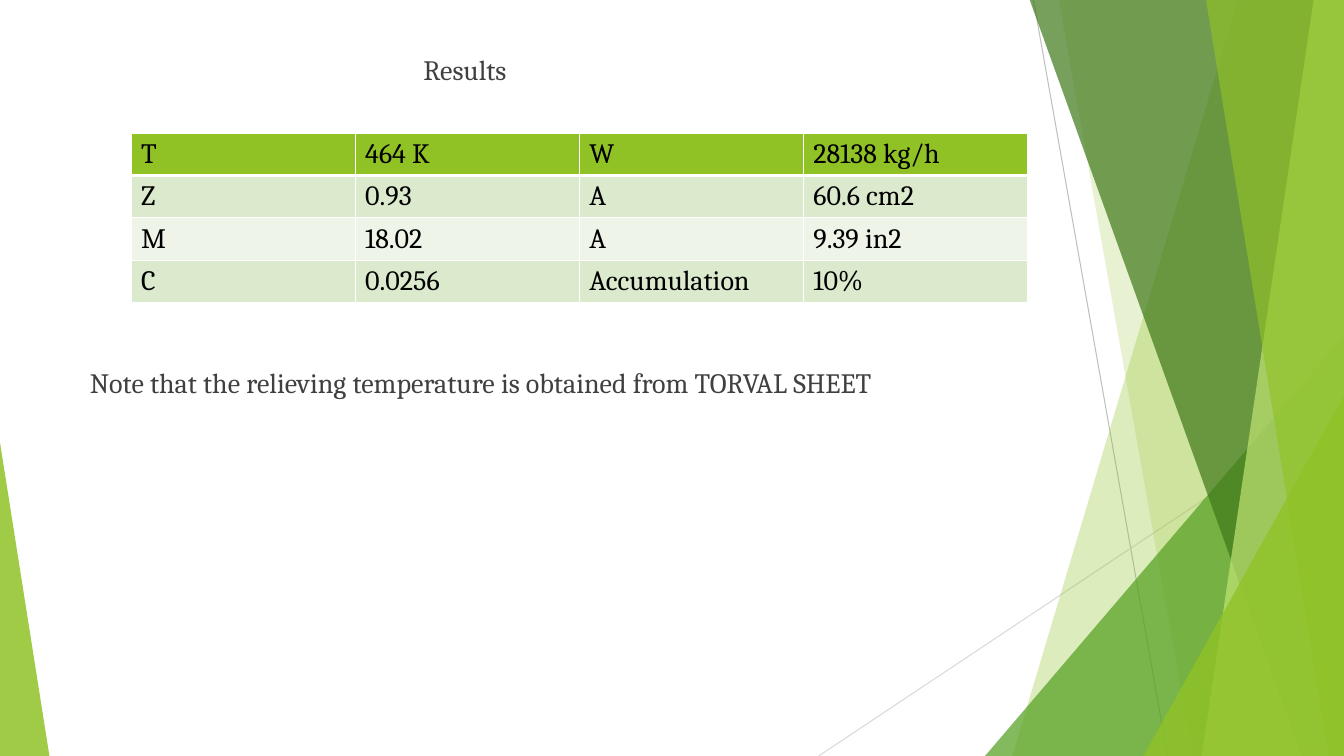
from dataclasses import dataclass

from lxml import etree
from pptx import Presentation
from pptx.dml.color import RGBColor
from pptx.enum.shapes import MSO_CONNECTOR, MSO_SHAPE
from pptx.enum.text import MSO_ANCHOR, MSO_AUTO_SIZE, PP_ALIGN
from pptx.oxml.ns import qn
from pptx.util import Inches, Pt

LINE = MSO_CONNECTOR.STRAIGHT
WEDGE = MSO_SHAPE.ISOSCELES_TRIANGLE
MIDDLE = MSO_ANCHOR.MIDDLE
NO_FIT = MSO_AUTO_SIZE.NONE
LEFT = PP_ALIGN.LEFT


@dataclass(frozen=True)
class Theme:
    font: str = "Cambria"
    size: int = 20
    text: str = "404040"
    cell: str = "000000"
    white: str = "FFFFFF"
    lime: str = "90C226"
    green: str = "54A021"
    dark: str = "3F7819"
    pale: str = "C0E474"
    bands: tuple = ("EEF4E8", "DBE9CD")
    rays: tuple = ("BFBFBF", "D9D9D9")


THEME = Theme()
WIDTH, HEIGHT = 13.33, 7.5
TOP = -0.01

# Start, end
RAYS = [((10.25, 0), (11.58, HEIGHT)), ((WIDTH, 4.03), (8.12, HEIGHT))]

# Left edge at the top and at the bottom, colour, opacity
BACK = [(12.28, 10.04, THEME.lime, 30), (10.5, 11.83, THEME.lime, 20)]
FRONT = [
    (10.21, 12.91, THEME.dark, 70),
    (13.03, 11.92, THEME.pale, 70),
    (11.96, 13.18, THEME.lime, 65),
]

ROWS = [
    ("T", "464 K", "W", "28138 kg/h"),
    ("Z", "0.93", "A", "60.6 cm2"),
    ("M", "18.02", "A", "9.39 in2"),
    ("C", "0.0256", "Accumulation", "10%"),
]


def rgb(code):
    return RGBColor.from_string(code)


def paint(shape, color, alpha):
    """Fill a shape with a see-through colour and no outline."""
    shape.shadow.inherit = False
    shape.line.fill.background()
    shape.fill.solid()
    shape.fill.fore_color.rgb = rgb(color)
    tone = shape.fill._xPr.find(".//" + qn("a:srgbClr"))
    etree.SubElement(tone, qn("a:alpha"), val=str(alpha * 1000))


def add_ray(slide, start, end, color):
    ray = slide.shapes.add_connector(LINE, *map(Inches, start + end))
    ray.line.color.rgb = rgb(color)
    ray.line.width = Pt(0.75)
    etree.SubElement(ray._element.spPr, qn("a:effectLst"))


def add_band(slide, upper, lower, color, alpha):
    """Draw a slanted band that reaches the right edge of the slide."""
    spots = [(upper, TOP), (WIDTH, TOP), (WIDTH, HEIGHT), (lower, HEIGHT)]
    spots = [(Inches(x), Inches(y)) for x, y in spots]
    path = slide.shapes.build_freeform(*spots[0])
    path.add_line_segments(spots[1:], close=True)
    paint(path.convert_to_shape(), color, alpha)


def add_wedge(slide, left, top, width, peak, color, alpha):
    """Draw a triangle that stands on the bottom edge of the slide."""
    box = map(Inches, (left, top, width, HEIGHT - top))
    wedge = slide.shapes.add_shape(WEDGE, *box)
    wedge.adjustments[0] = peak
    paint(wedge, color, alpha)


def style(para, color):
    para.alignment = LEFT
    para.font.name = THEME.font
    para.font.size = Pt(THEME.size)
    para.font.bold = False
    para.font.color.rgb = rgb(color)


def set_text(holder, text, box):
    """Move a placeholder and give it one line of plain text."""
    holder.left, holder.top, holder.width, holder.height = map(Inches, box)
    frame = holder.text_frame
    frame.text = text
    frame.word_wrap = True
    frame.auto_size = NO_FIT
    frame.vertical_anchor = MIDDLE
    frame.margin_left = frame.margin_right = 0
    frame.margin_top = frame.margin_bottom = 0
    para = frame.paragraphs[0]
    style(para, THEME.text)
    para.space_before = Pt(0)
    props = para._p.get_or_add_pPr()
    props.set("marL", "0")
    props.set("indent", "0")
    etree.SubElement(props, qn("a:buNone"))
    # The bullet mark belongs before the default run properties
    props.append(props.find(qn("a:defRPr")))


def add_edge(cell, side, width):
    props = cell._tc.get_or_add_tcPr()
    edge = etree.SubElement(props, qn("a:ln" + side), w=str(Pt(width)))
    fill = etree.SubElement(edge, qn("a:solidFill"))
    etree.SubElement(fill, qn("a:srgbClr"), val=THEME.white)


def add_grid(slide, rows, left, top, width, height):
    box = map(Inches, (left, top, width, height))
    grid = slide.shapes.add_table(len(rows), len(rows[0]), *box).table
    for r, row in enumerate(rows):
        for c, text in enumerate(row):
            cell = grid.cell(r, c)
            cell.text = text
            style(cell.text_frame.paragraphs[0], THEME.cell)
            # A thick rule parts the header from the body
            edges = {"L": 1, "R": 1, "T": 3 if r == 1 else 1,
                     "B": 3 if r == 0 else 1}
            for side, weight in edges.items():
                add_edge(cell, side, weight)
            cell.fill.solid()
            tone = THEME.bands[r % 2] if r else THEME.lime
            cell.fill.fore_color.rgb = rgb(tone)


def main():
    deck = Presentation()
    deck.slide_width, deck.slide_height = Inches(WIDTH), Inches(HEIGHT)
    slide = deck.slides.add_slide(deck.slide_layouts[1])

    # Backdrop
    for (start, end), color in zip(RAYS, THEME.rays):
        add_ray(slide, start, end, color)
    for band in BACK:
        add_band(slide, *band)
    add_wedge(slide, 9.77, 3.33, 3.56, 1, THEME.green, 72)
    for band in FRONT:
        add_band(slide, *band)
    add_wedge(slide, 11.34, 3.93, 1.99, 1, THEME.lime, 80)
    add_wedge(slide, 0, 4.39, 0.49, 0, THEME.lime, 85)

    # Heading and note
    set_text(slide.shapes.title, "Results", (4.2, 0.49, 3, 0.4))
    note = "Note that the relieving temperature is obtained from TORVAL SHEET"
    set_text(slide.placeholders[1], note, (0.89, 3.59, 9, 0.4))

    # Results table
    add_grid(slide, ROWS, 1.3, 1.32, 8.89, 1.68)

    deck.save("out.pptx")


if __name__ == "__main__":
    main()
